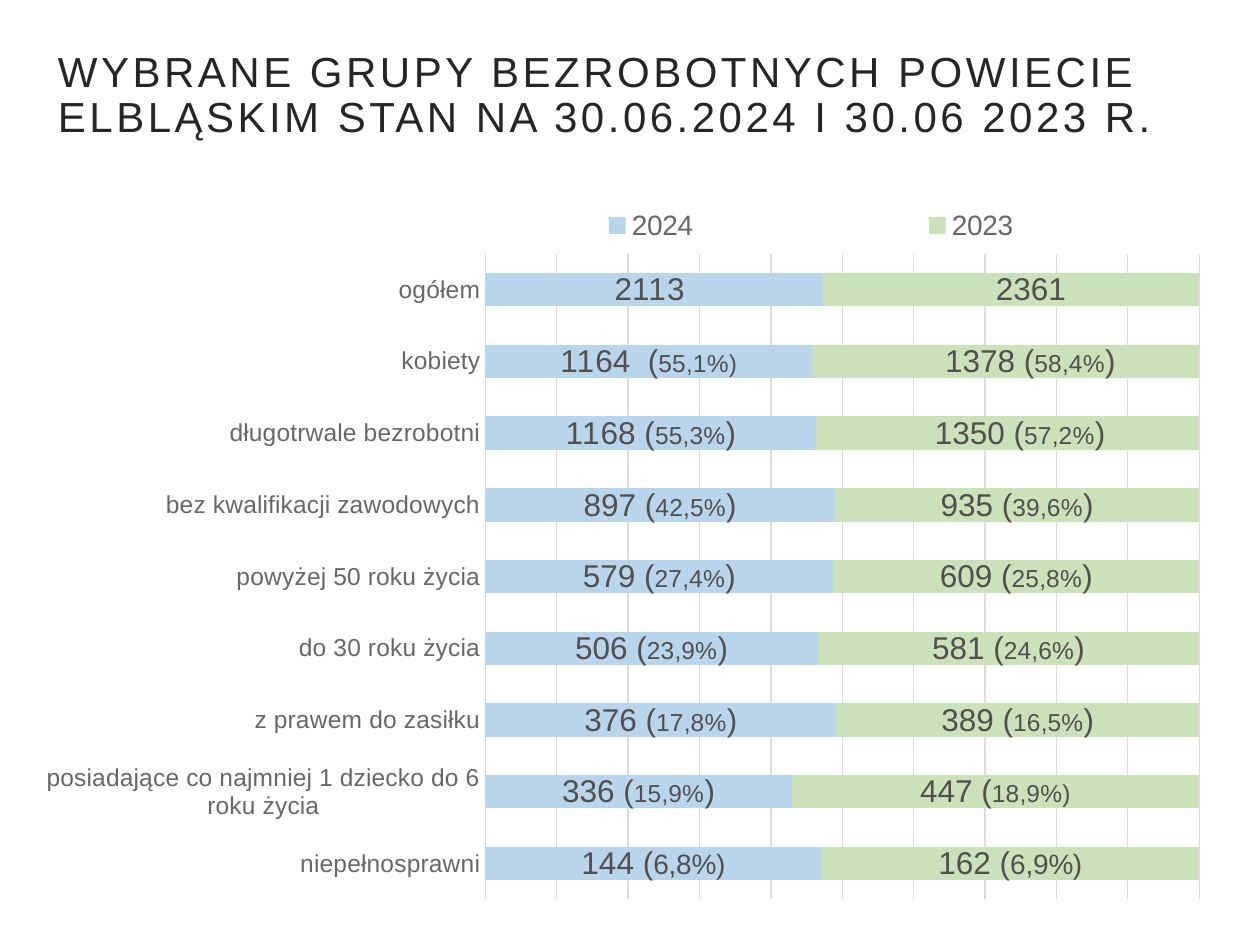
from typing import NamedTuple

from lxml.etree import SubElement
from pptx import Presentation
from pptx.chart.data import CategoryChartData
from pptx.dml.color import RGBColor
from pptx.enum.chart import XL_CHART_TYPE as Kind
from pptx.enum.chart import XL_LABEL_POSITION as Spot
from pptx.enum.chart import XL_LEGEND_POSITION as Side
from pptx.enum.chart import XL_TICK_LABEL_POSITION as Tick
from pptx.enum.chart import XL_TICK_MARK as Mark
from pptx.enum.text import MSO_ANCHOR, MSO_AUTO_SIZE, PP_ALIGN
from pptx.oxml.ns import qn
from pptx.util import Inches, Pt

BLUE = RGBColor(0xB9, 0xD5, 0xEC)
GREEN = RGBColor(0xCA, 0xE1, 0xB9)
DARK = RGBColor(0x26, 0x26, 0x26)
INK = RGBColor(0x17, 0x16, 0x16)
GREY = RGBColor(0x6A, 0x66, 0x66)
LABEL = RGBColor(0x52, 0x4F, 0x4F)
RULE = RGBColor(0xDD, 0xDB, 0xDB)
FACE = "Arial"
TITLE = ("WYBRANE GRUPY BEZROBOTNYCH POWIECIE ELBLĄSKIM "
         "STAN NA 30.06.2024 I 30.06 2023 R.")


class Bar(NamedTuple):
    """A value and its label: large head, smaller share, large tail."""
    value: int
    head: str
    share: str = ""
    tail: str = ""
    size: int = 14
    dx: float = 0


class Group(NamedTuple):
    name: str
    bars: tuple[Bar, Bar]  # 2024, 2023


GROUPS = [
    Group("niepełnosprawni", (Bar(144, "144 (", "6,8%)", size=16),
                              Bar(162, "162 (", "6,9%)", size=16))),
    Group("posiadające co najmniej 1 dziecko do 6 roku życia",
          (Bar(336, "336 (", "15,9%", ")"), Bar(447, "447 (", "18,9%)"))),
    Group("z prawem do zasiłku",
          (Bar(376, "376 (", "17,8%", ")"), Bar(389, "389 (", "16,5%", ")"))),
    Group("do 30 roku życia",
          (Bar(506, "506 (", "23,9%", ")"), Bar(581, "581 (", "24,6%", ")"))),
    Group("powyżej 50 roku życia",
          (Bar(579, "579 (", "27,4%", ")"), Bar(609, "609 (", "25,8%", ")"))),
    Group("bez kwalifikacji zawodowych",
          (Bar(897, "897 (", "42,5%", ")"), Bar(935, "935 (", "39,6%", ")"))),
    Group("długotrwale bezrobotni",
          (Bar(1168, "1168 (", "55,3%", ")"),
           Bar(1350, "1350 (", "57,2%", ")", dx=0.01))),
    Group("kobiety", (Bar(1164, "1164  (", "55,1%)"),
                      Bar(1378, "1378 (", "58,4%", ")", dx=0.02))),
    Group("ogółem", (Bar(2113, "2113 "), Bar(2361, "2361 ", dx=0.02))),
]
YEARS = [("2024", BLUE), ("2023", GREEN)]


def style(font, size: float, color: RGBColor, face: str = FACE) -> None:
    font.size, font.name, font.bold = Pt(size), face, False
    font.color.rgb = color


def place(node, index: int, **parts: object) -> None:
    """Give a chart element a manual layout as its child at index."""
    for old in node.findall(qn("c:layout")):
        node.remove(old)
    layout = SubElement(node, qn("c:layout"))
    node.insert(index, layout)
    manual = SubElement(layout, qn("c:manualLayout"))
    for tag, value in parts.items():
        SubElement(manual, qn(f"c:{tag}")).set("val", str(value))


def add_title(slide) -> None:
    title = slide.shapes.title
    title.left, title.top = Inches(0.16), Inches(0.22)
    title.width, title.height = Inches(9.69), Inches(1.09)
    frame = title.text_frame
    frame.text = TITLE
    frame.word_wrap, frame.auto_size = True, MSO_AUTO_SIZE.NONE
    frame.vertical_anchor = MSO_ANCHOR.MIDDLE
    frame.margin_left = frame.margin_right = Inches(0.2)
    frame.margin_top = frame.margin_bottom = Inches(0.2)
    para = frame.paragraphs[0]
    para.alignment, para.line_spacing = PP_ALIGN.LEFT, 0.9
    props = para._p.get_or_add_pPr()
    props.set("marL", str(Inches(0.1)))
    props.set("indent", "0")
    font = para.runs[0].font
    style(font, 24, DARK)
    font._element.set("spc", "200")


def label_bar(series, index: int, bar: Bar) -> None:
    label = series.points[index].data_label
    para = label.text_frame.paragraphs[0]
    for text, size in ((bar.head, 18), (bar.share, bar.size), (bar.tail, 18)):
        if text:
            run = para.add_run()
            run.text = text
            style(run.font, size, LABEL)
    label.position = Spot.CENTER
    if bar.dx:
        node = series._element.xpath(f"c:dLbls/c:dLbl[c:idx/@val='{index}']")[0]
        place(node, 1, x=bar.dx, y=0)


def style_axes(chart) -> None:
    cats, vals = chart.category_axis, chart.value_axis
    cats.major_tick_mark = cats.minor_tick_mark = Mark.NONE
    cats.tick_label_position = Tick.NEXT_TO_AXIS
    style(cats.tick_labels.font, 14, GREY)
    cats.format.line.color.rgb = RULE
    cats.format.line.width = Pt(1)
    vals.visible = False
    vals.minimum_scale, vals.maximum_scale, vals.major_unit = 0, 1, 0.1
    grid = vals.major_gridlines.format.line
    grid.color.rgb, grid.width = RULE, Pt(0.75)


def add_chart(slide) -> None:
    data = CategoryChartData()
    data.categories = [group.name for group in GROUPS]
    for col, (year, _) in enumerate(YEARS):
        data.add_series(year, [group.bars[col].value for group in GROUPS])
    chart = slide.shapes.add_chart(
        Kind.BAR_STACKED_100, Inches(0.12), Inches(1.53),
        Inches(9.72), Inches(5.77), data).chart
    chart.has_title = False
    style(chart.font, 10, INK, "Cabin")
    style_axes(chart)

    plot = chart.plots[0]
    plot.gap_width, plot.overlap, plot.vary_by_categories = 115, 100, False
    for col, (series, (_, color)) in enumerate(zip(plot.series, YEARS)):
        series.format.fill.solid()
        series.format.fill.fore_color.rgb = color
        labels = series.data_labels
        labels.show_value, labels.position = True, Spot.CENTER
        style(labels.font, 18, LABEL)
        for row, group in enumerate(GROUPS):
            label_bar(series, row, group.bars[col])

    chart.has_legend = True
    legend = chart.legend
    legend.position, legend.include_in_layout = Side.BOTTOM, False
    style(legend.font, 16, GREY)
    place(legend._element, 1, xMode="edge", yMode="edge",
          x=0.3, y=0.01, w=0.7, h=0.07)
    place(chart.element.xpath("c:chart/c:plotArea")[0], 0,
          layoutTarget="inner", xMode="edge", yMode="edge",
          x=0.384, y=0.084, w=0.583, h=0.888)


def main() -> None:
    deck = Presentation()
    deck.slide_width, deck.slide_height = Inches(10), Inches(7.5)
    slide = deck.slides.add_slide(deck.slide_layouts[5])
    add_title(slide)
    add_chart(slide)
    deck.save("out.pptx")


if __name__ == "__main__":
    main()
